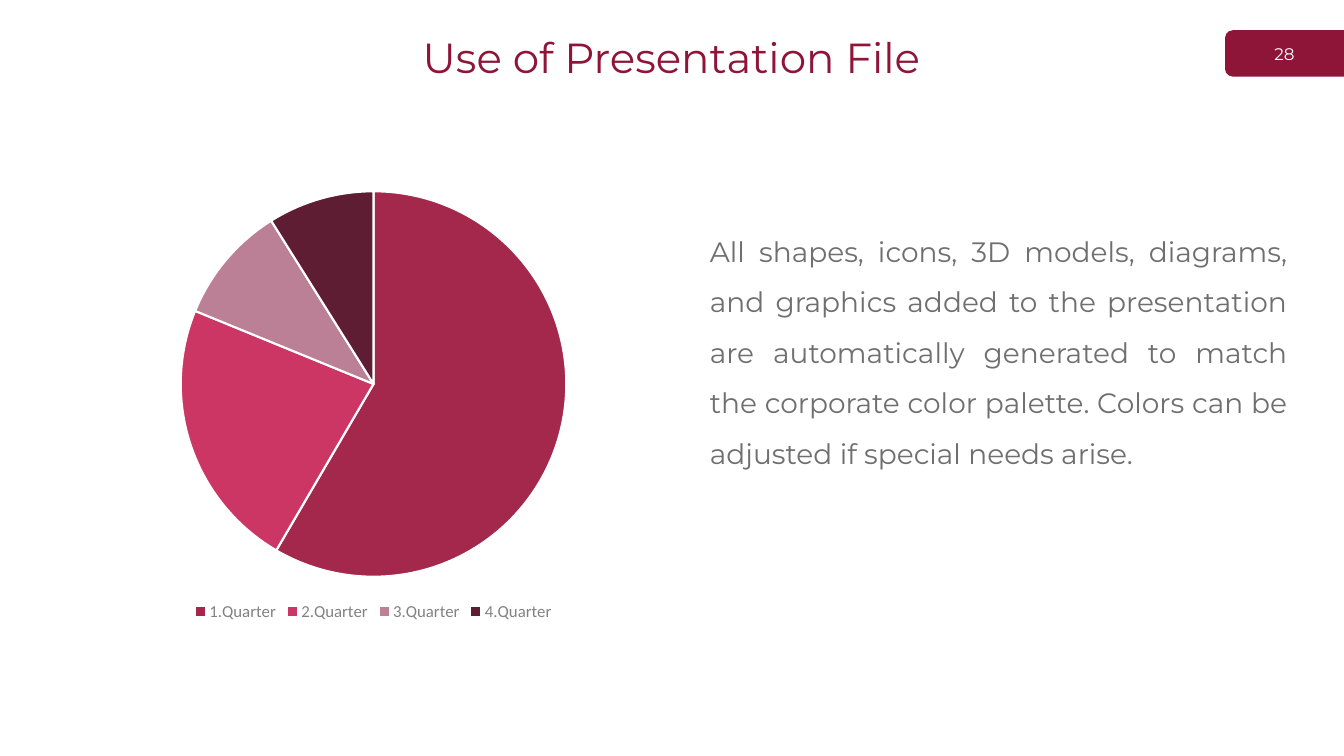
from pptx import Presentation
from pptx.chart.data import CategoryChartData
from pptx.dml.color import RGBColor
from pptx.enum.chart import XL_CHART_TYPE, XL_LEGEND_POSITION
from pptx.enum.shapes import MSO_SHAPE
from pptx.enum.text import MSO_ANCHOR, MSO_AUTO_SIZE, PP_ALIGN
from pptx.oxml.ns import qn
from pptx.util import Inches, Pt

COLORS = {
    "wine": "8E1438",
    "white": "FFFFFF",
    "gray": "706F6F",
    "label": "828282",
    "dark": "3E3E3E",
}
SLICES = {
    "1.Quarter": (59, "A4284B"),
    "2.Quarter": (23, "CB3665"),
    "3.Quarter": (10, "BB8096"),
    "4.Quarter": (9, "5F1D33"),
}
BODY = (
    "All shapes, icons, 3D models, diagrams, and graphics added to the "
    "presentation are automatically generated to match the corporate color "
    "palette. Colors can be adjusted if special needs arise."
)


def style(font, name, size, color):
    """Set the name, size and colour of a font."""
    font.name = name
    font.size = Pt(size)
    font.color.rgb = RGBColor.from_string(color)


def write(shape, text, size, color, align, anchor, spacing):
    """Put one formatted paragraph into a text shape."""
    frame = shape.text_frame
    frame.text = text
    frame.word_wrap = True
    frame.auto_size = MSO_AUTO_SIZE.NONE
    frame.vertical_anchor = anchor
    para = frame.paragraphs[0]
    para.alignment = align
    para.line_spacing = spacing
    para.space_before = Pt(0)
    props = para._p.get_or_add_pPr()
    props.set("marL", "0")
    props.set("indent", "0")
    props.append(props.makeelement(qn("a:buNone"), {}))
    style(para.font, "Montserrat", size, color)


def place(shape, left, top, width, height):
    """Move a shape into the given box, in inches."""
    shape.left, shape.top = Inches(left), Inches(top)
    shape.width, shape.height = Inches(width), Inches(height)


def add_badge(slide, left, top, width, height, number):
    """Draw the page number tab, rounded on its left side."""
    thick = 0.46
    tab = slide.shapes.add_shape(
        MSO_SHAPE.ROUND_2_SAME_RECTANGLE,
        Inches(left + (width - thick) / 2),
        Inches(top + (height - width) / 2),
        Inches(thick),
        Inches(width),
    )
    tab.rotation = 270
    tab.shadow.inherit = False
    tab.fill.solid()
    tab.fill.fore_color.rgb = RGBColor.from_string(COLORS["wine"])
    tab.line.fill.background()
    label = slide.shapes.add_textbox(
        Inches(left), Inches(top), Inches(width), Inches(height)
    )
    write(label, number, 12, COLORS["white"], PP_ALIGN.CENTER, MSO_ANCHOR.MIDDLE, 1.0)


def add_pie(slide, left, top, width, height):
    """Draw the pie of quarters with its legend below."""
    data = CategoryChartData()
    data.categories = list(SLICES)
    data.add_series("Series 1", [value for value, _ in SLICES.values()])
    chart = slide.shapes.add_chart(
        XL_CHART_TYPE.PIE,
        Inches(left),
        Inches(top),
        Inches(width),
        Inches(height),
        data,
    ).chart
    style(chart.font, "Calibri", 10, COLORS["dark"])
    chart.has_title = False
    chart.has_legend = True
    chart.legend.position = XL_LEGEND_POSITION.BOTTOM
    chart.legend.include_in_layout = False
    style(chart.legend.font, "Calibri", 12, COLORS["label"])
    plot = chart.plots[0]
    plot.vary_by_categories = True
    for index, (_, color) in enumerate(SLICES.values()):
        form = plot.series[0].points[index].format
        form.fill.solid()
        form.fill.fore_color.rgb = RGBColor.from_string(color)
        form.line.color.rgb = RGBColor.from_string(COLORS["white"])
        form.line.width = Pt(1.5)


def build():
    """Build the slide and save the deck."""
    deck = Presentation()
    deck.slide_width, deck.slide_height = Inches(13.33), Inches(7.5)
    slide = deck.slides.add_slide(deck.slide_layouts[1])
    title, body = slide.shapes.title, slide.placeholders[1]
    add_badge(slide, 12.15, 0.33, 1.18, 0.4, "28")
    place(body, 6.94, 2.11, 5.93, 3.76)
    write(body, BODY, 20, COLORS["gray"], PP_ALIGN.JUSTIFY, MSO_ANCHOR.TOP, 1.5)
    place(title, 2.52, 0.2, 8.28, 0.78)
    write(
        title, "Use of Presentation File", 30, COLORS["wine"],
        PP_ALIGN.CENTER, MSO_ANCHOR.MIDDLE, 0.9,
    )
    add_pie(slide, 0.37, 1.76, 6.67, 4.45)
    deck.save("out.pptx")


if __name__ == "__main__":
    build()
